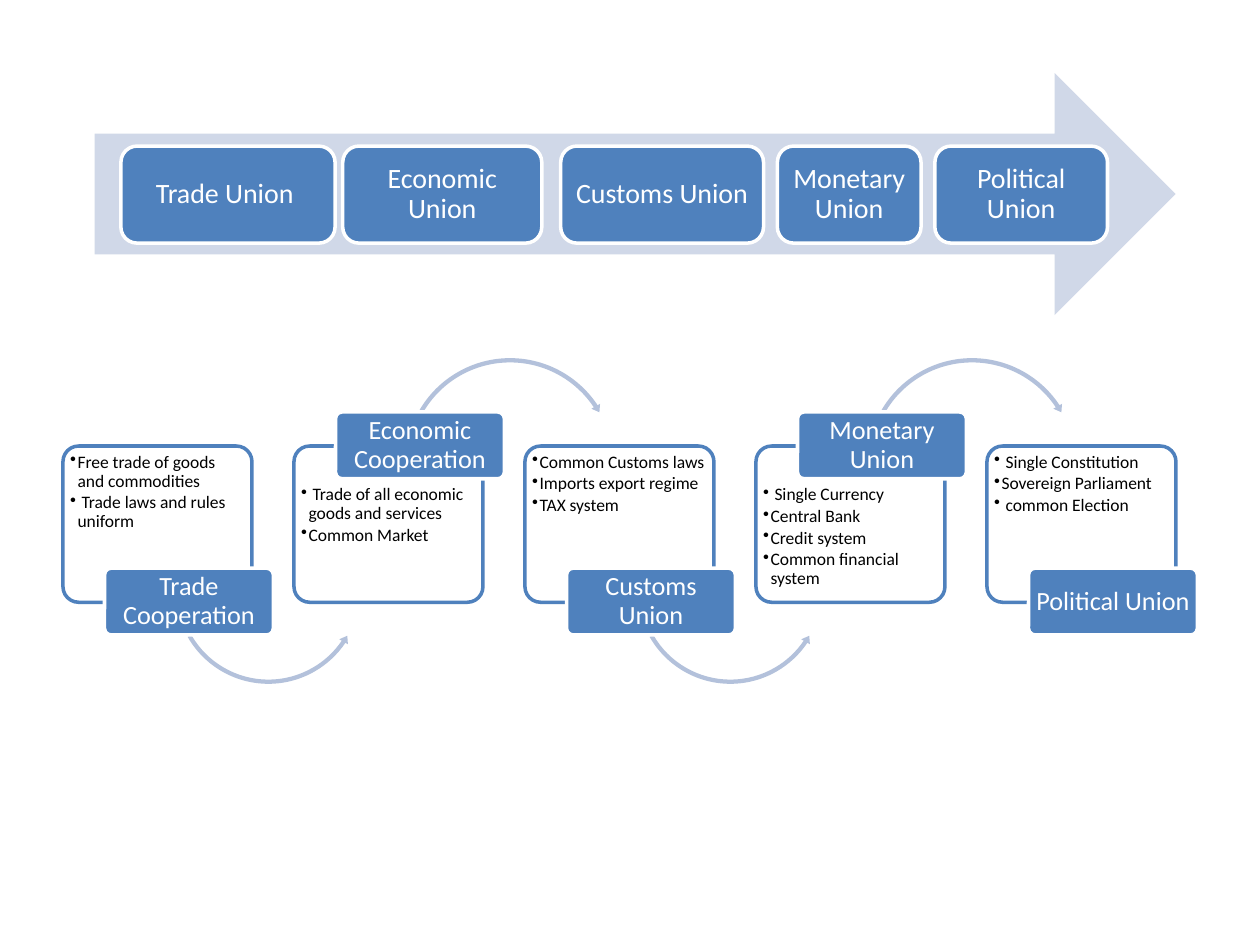
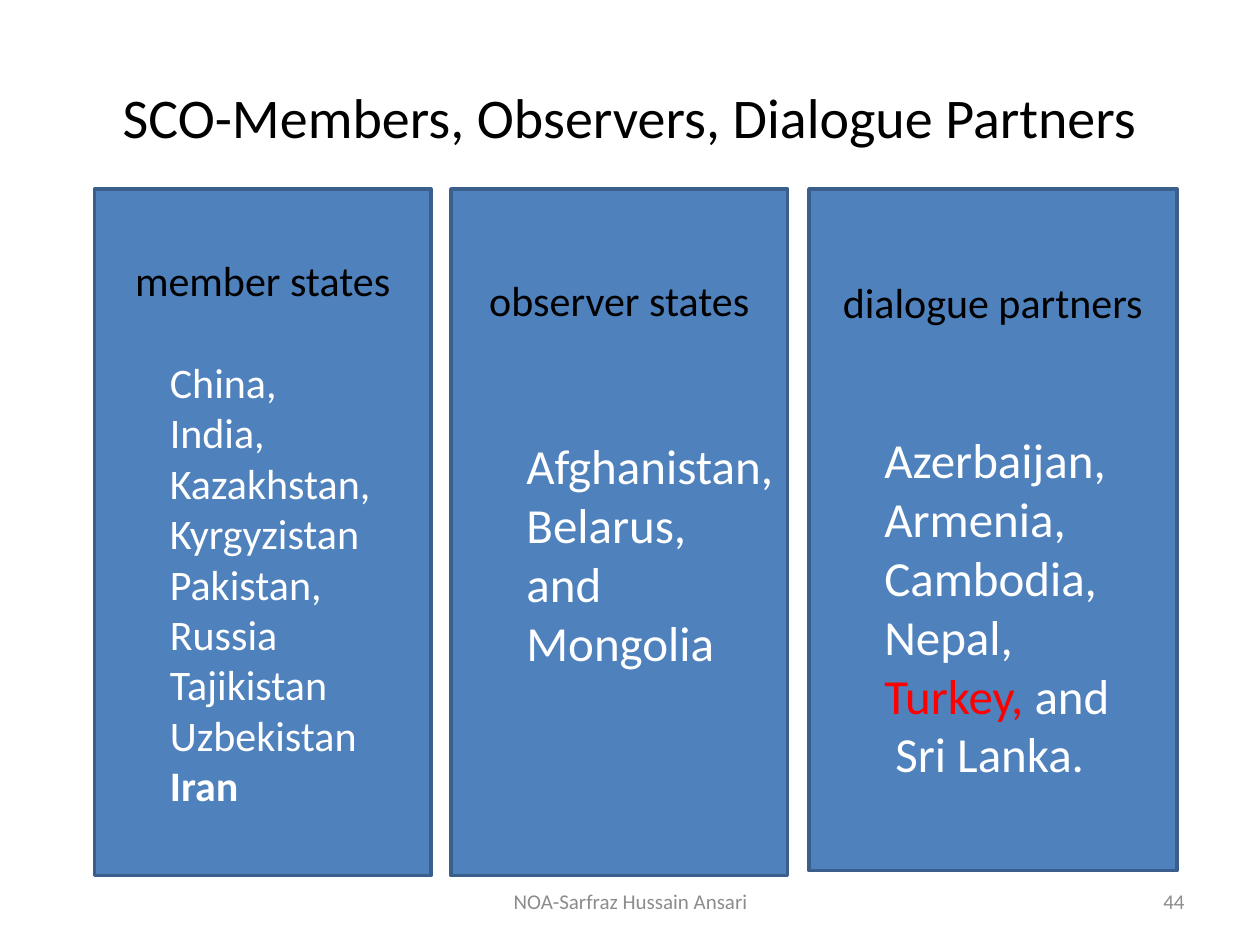
import dataclasses

import pptx
import pptx.dml.color
import pptx.enum.shapes
import pptx.enum.text
import pptx.oxml.ns
import pptx.util
from lxml import etree

SHAPES = pptx.enum.shapes.MSO_SHAPE
ALIGN = pptx.enum.text.PP_ALIGN
ANCHOR = pptx.enum.text.MSO_ANCHOR


@dataclasses.dataclass(frozen=True)
class Theme:
    font: str = "Calibri"
    blue: str = "4F81BD"
    outline: str = "3A5F8C"
    curve: str = "B3C1DB"
    band: str = "D0D8E8"
    white: str = "FFFFFF"
    black: str = "000000"
    red: str = "FF0000"
    grey: str = "8C8C8C"
    title: int = 32
    large: int = 28
    heading: int = 24
    stage: int = 16
    label: int = 15
    footer: int = 12
    note: int = 10
    line: int = 2
    line_height: float = 1.22


THEME = Theme()
COLUMNS, ROWS = 100, 75
SLIDE_WIDTH, SLIDE_HEIGHT = pptx.util.Inches(10), pptx.util.Inches(7.5)

STAGES = [
    ("Trade Union ", 9.6, 17),
    ("Economic Union", 27.2, 15.8),
    ("Customs Union", 44.5, 16.1),
    ("Monetary Union", 61.7, 11.4),
    ("Political Union", 74.2, 13.7),
]
STEPS = [
    ("Trade Cooperation", ["Free trade of goods and commodities", " Trade laws and rules uniform"]),
    ("Economic Cooperation", [" Trade of all economic goods and services", "Common Market"]),
    ("Customs Union", ["Common Customs laws", "Imports export regime", "TAX system"]),
    ("Monetary Union", [" Single Currency", "Central Bank", "Credit system", "Common financial system"]),
    ("Political Union", [" Single Constitution", "Sovereign Parliament", " common Election"]),
]
STEP_LEFT, STEP_PITCH = 5, 55 / 3

MEMBERS = ["China,", "India,", "Kazakhstan,", "Kyrgyzistan", "Pakistan,", "Russia",
           "Tajikistan", "Uzbekistan", "Iran"]
OBSERVERS = ["Afghanistan,", "Belarus,", "and", "Mongolia"]
PARTNERS = ["Azerbaijan,", "Armenia,", "Cambodia,", "Nepal,", ("Turkey,", " and"), " Sri Lanka."]


def place(left, top, width, height):
    across, down = SLIDE_WIDTH / COLUMNS, SLIDE_HEIGHT / ROWS
    return [round(length) for length in (left * across, top * down, width * across, height * down)]


def rgb(colour):
    return pptx.dml.color.RGBColor.from_string(colour)


def add_figure(slide, kind, box, fill, line=None, corner=None):
    shape = slide.shapes.add_shape(kind, *place(*box))
    shape.shadow.inherit = False
    shape.fill.solid()
    shape.fill.fore_color.rgb = rgb(fill)
    if line:
        shape.line.color.rgb = rgb(line)
        shape.line.width = pptx.util.Pt(THEME.line)
    else:
        shape.line.fill.background()
    if corner is not None:
        shape.adjustments[0] = corner
    return shape


def set_frame(frame, anchor, side=0.1, top=0.05, bottom=0.05):
    frame.word_wrap = True
    frame.vertical_anchor = anchor
    frame.margin_left = frame.margin_right = pptx.util.Inches(side)
    frame.margin_top = pptx.util.Inches(top)
    frame.margin_bottom = pptx.util.Inches(bottom)


def format_paragraph(paragraph, size, colour, align=ALIGN.LEFT, spacing=1.0):
    paragraph.alignment = align
    paragraph.line_spacing = spacing
    for run in paragraph.runs:
        run.font.name = THEME.font
        run.font.size = pptx.util.Pt(size)
        run.font.color.rgb = rgb(colour)


def set_indent(paragraph, left, first=0.0, bullet=None):
    properties = paragraph._p.get_or_add_pPr()
    properties.set("marL", str(pptx.util.Inches(left)))
    properties.set("indent", str(pptx.util.Inches(first)))
    if bullet:
        etree.SubElement(properties, pptx.oxml.ns.qn("a:buChar")).set("char", bullet)


def add_label(slide, text, box, size, corner, side, top):
    shape = add_figure(slide, SHAPES.ROUNDED_RECTANGLE, box, THEME.blue, THEME.white, corner)
    set_frame(shape.text_frame, ANCHOR.MIDDLE, side, top, top)
    shape.text_frame.text = text
    format_paragraph(shape.text_frame.paragraphs[0], size, THEME.white, ALIGN.CENTER, 0.9)


def add_note_panel(slide, notes, left, label_on_top):
    panel = add_figure(slide, SHAPES.ROUNDED_RECTANGLE, (left, 35.4, 15, 12.4),
                       THEME.white, THEME.blue, 0.1)
    colour = panel._element.spPr.find(".//" + pptx.oxml.ns.qn("a:srgbClr"))
    etree.SubElement(colour, pptx.oxml.ns.qn("a:alpha")).set("val", "90000")
    frame = panel.text_frame
    set_frame(frame, ANCHOR.TOP, 0.02, 0.28 if label_on_top else 0.02, 0.02)
    frame.text = "\n".join(notes)
    for paragraph in frame.paragraphs:
        format_paragraph(paragraph, THEME.note, THEME.black, spacing=0.9)
        paragraph.space_after = pptx.util.Pt(0.15 * THEME.note)
        set_indent(paragraph, 0.06, -0.06, "•")


def add_curve(slide, step_left, over):
    if over:
        kind, box = SHAPES.CIRCULAR_ARROW, (step_left + 8.6, 28.2, 17.1, 17.1)
        thickness, angles, head = 2, (3.94, 326.47, 209.59), 2.3
    else:
        kind, box = SHAPES.LEFT_CIRCULAR_ARROW, (step_left + 8.7, 39.3, 15.2, 15.2)
        thickness, angles, head = 2.2, (4.47, 34.06, 150.41), 2.6
    curve = add_figure(slide, kind, box, THEME.curve)
    values = [thickness / 100, *(angle * 0.6 for angle in angles), head / 100]
    for index, value in enumerate(values):
        curve.adjustments[index] = value


def add_country_column(slide, heading, lines, box, size, gap, bottom=0.05):
    column = add_figure(slide, SHAPES.RECTANGLE, box, THEME.blue, THEME.outline)
    frame = column.text_frame
    set_frame(frame, ANCHOR.MIDDLE, bottom=bottom)
    frame.text = heading
    format_paragraph(frame.paragraphs[0], THEME.heading, THEME.black, ALIGN.CENTER)
    frame.paragraphs[0].space_after = pptx.util.Pt(round(gap * THEME.line_height, 1))
    for line in lines:
        paragraph = frame.add_paragraph()
        for piece in [line] if isinstance(line, str) else line:
            paragraph.add_run().text = piece
        format_paragraph(paragraph, size, THEME.white)
        set_indent(paragraph, 0.5)
    return frame


def add_footer(slide, text, box, align):
    frame = slide.shapes.add_textbox(*place(*box)).text_frame
    set_frame(frame, ANCHOR.MIDDLE)
    frame.text = text
    format_paragraph(frame.paragraphs[0], THEME.footer, THEME.grey, align)


def build_union_slide(presentation):
    slide = presentation.slides.add_slide(presentation.slide_layouts[6])
    for index, (name, notes) in enumerate(STEPS):
        left = STEP_LEFT + index * STEP_PITCH
        on_top = index % 2 == 1
        add_note_panel(slide, notes, left, on_top)
        if index < len(STEPS) - 1:
            add_curve(slide, left, on_top)
        add_label(slide, name, (left + 3.3, 32.7 if on_top else 45.1, 13.4, 5.3),
                  THEME.label, 0.1, 0.03, 0.02)
    add_figure(slide, SHAPES.RIGHT_ARROW, (7.5, 5.8, 85.8, 19.2), THEME.band)
    for name, left, width in STAGES:
        add_label(slide, name, (left, 11.6, width, 7.7), THEME.stage, 1 / 6, 0.07, 0.07)


def build_members_slide(presentation):
    slide = presentation.slides.add_slide(presentation.slide_layouts[5])
    title = slide.shapes.title
    title.left, title.top, title.width, title.height = place(5, 3, 90, 12.5)
    set_frame(title.text_frame, ANCHOR.MIDDLE)
    title.text_frame.text = "SCO-Members, Observers, Dialogue Partners"
    format_paragraph(title.text_frame.paragraphs[0], THEME.title, THEME.black, ALIGN.CENTER)

    members = add_country_column(slide, "member states", MEMBERS, (7.5, 15, 26.7, 54.5),
                                 THEME.heading, THEME.heading)
    members.paragraphs[-1].runs[0].font.bold = True
    add_country_column(slide, "observer states", OBSERVERS, (35.8, 15, 26.7, 54.5),
                       THEME.large, THEME.heading + THEME.large, bottom=1)
    partners = add_country_column(slide, "dialogue partners", PARTNERS, (64.2, 15, 29.2, 54.1),
                                  THEME.large, 2 * THEME.heading)
    partners.paragraphs[-2].runs[0].font.color.rgb = rgb(THEME.red)

    add_footer(slide, "NOA-Sarfraz Hussain Ansari", (34.2, 69.5, 31.7, 4), ALIGN.CENTER)
    add_footer(slide, "44", (71.7, 69.5, 23.3, 4), ALIGN.RIGHT)


def main():
    presentation = pptx.Presentation()
    presentation.slide_width, presentation.slide_height = SLIDE_WIDTH, SLIDE_HEIGHT
    build_union_slide(presentation)
    build_members_slide(presentation)
    presentation.save("out.pptx")


if __name__ == "__main__":
    main()
